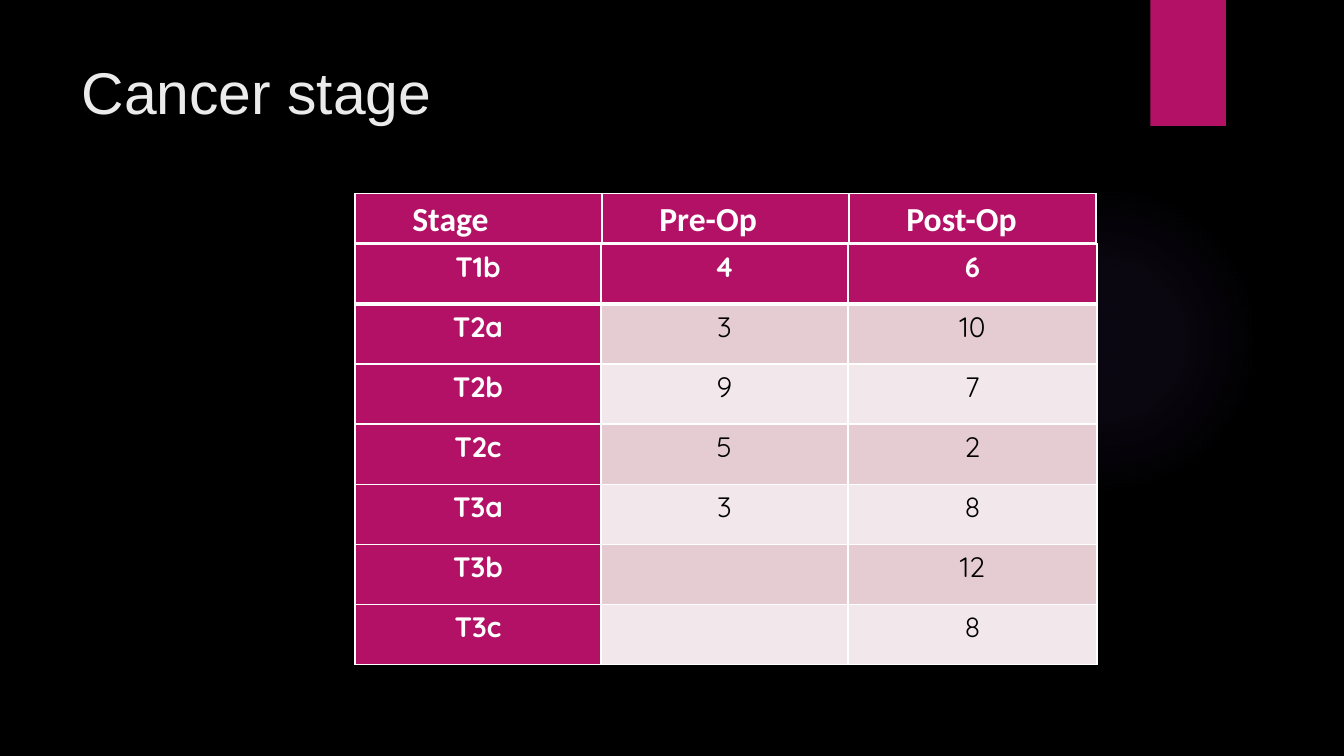
from lxml import etree
from pptx import Presentation
from pptx import util as u
from pptx.dml.color import RGBColor
from pptx.enum import shapes, text
from pptx.oxml import parse_xml
from pptx.oxml.ns import qn

NS = 'xmlns:a="http://schemas.openxmlformats.org/drawingml/2006/main"'
HUES = {
    "back": "000000", "pink": "B31166", "glow": "9B6BF2", "title": "EBEBEB",
    "white": "FFFFFF", "ink": "000000", "rose": "E5CCD3", "pale": "F2E7EA",
}
HEAD = [["Stage", "Pre-Op", "Post-Op"]]
COUNTS = [
    ["T1b", "4", "6"],
    ["T2a", "3", "10"],
    ["T2b", "9", "7"],
    ["T2c", "5", "2"],
    ["T3a", "3", "8"],
    ["T3b", "", "12"],
    ["T3c", "", "8"],
]


def rgb(name):
    return RGBColor.from_string(HUES[name])


def write(frame, words, font="Arial", size=20, hue="ink", bold=False,
          align=text.PP_ALIGN.LEFT, space=None, indent=0):
    par = frame.paragraphs[0]
    par.alignment = align
    par.line_spacing = space
    if indent:
        par._p.get_or_add_pPr().set("marL", str(u.Inches(indent)))
    run = par.add_run()
    run.text = words
    run.font.name = font
    run.font.size = u.Pt(size)
    run.font.bold = bold
    run.font.color.rgb = rgb(hue)


class Deck:
    """Holds the style and the current slide, and draws each kind of element."""

    def __init__(self):
        self.show = Presentation()
        self.show.slide_width = u.Inches(13.33)
        self.show.slide_height = u.Inches(7.5)
        self.slide = self.show.slides.add_slide(self.show.slide_layouts[5])
        fill = self.slide.background.fill
        fill.solid()
        fill.fore_color.rgb = rgb("back")

    def shape(self, kind, *place):
        item = self.slide.shapes.add_shape(kind, *map(u.Inches, place))
        item.shadow.inherit = False
        item.line.fill.background()
        return item

    def glow(self, *place):
        item = self.shape(shapes.MSO_SHAPE.OVAL, *place)
        stops = "".join(
            f'<a:gs pos="{pos}000"><a:srgbClr val="{HUES["glow"]}">'
            f'<a:alpha val="{alpha}000"/></a:srgbClr></a:gs>'
            for pos, alpha in [(0, 7), (36, 6), (69, 0)])
        item._element.spPr.insert(2, parse_xml(
            f'<a:gradFill {NS}><a:gsLst>{stops}</a:gsLst><a:path path="circle">'
            '<a:fillToRect l="50000" t="50000" r="50000" b="50000"/>'
            '</a:path></a:gradFill>'))

    def tab(self, *place):
        item = self.shape(shapes.MSO_SHAPE.RECTANGLE, *place)
        item.fill.solid()
        item.fill.fore_color.rgb = rgb("pink")
        item._element.spPr.find(qn("a:effectLst")).append(parse_xml(
            f'<a:outerShdw {NS} blurRad="{u.Pt(3)}" dist="{u.Pt(2)}" dir="5400000">'
            '<a:srgbClr val="000000"><a:alpha val="45000"/></a:srgbClr>'
            '</a:outerShdw>'))

    def title(self, words, *place):
        item = self.slide.shapes.title
        item.left, item.top, item.width, item.height = map(u.Inches, place)
        item.text_frame.vertical_anchor = text.MSO_ANCHOR.TOP
        write(item.text_frame, words, size=42, hue="title")

    def edge(self, cell, widths):
        props = cell._tc.get_or_add_tcPr()
        for spot, (side, width) in enumerate(widths.items()):
            line = etree.Element(qn(f"a:ln{side}"), w=str(u.Pt(width)))
            fill = etree.SubElement(line, qn("a:solidFill"))
            etree.SubElement(fill, qn("a:srgbClr"), val=HUES["white"])
            props.insert(spot, line)

    def table(self, rows, left, top, widths, high, **style):
        frame = self.slide.shapes.add_table(
            len(rows), len(widths), u.Inches(left), u.Inches(top),
            u.Inches(sum(widths)), u.Inches(high))
        grid = frame.table
        for col, width in zip(grid.columns, widths):
            col.width = u.Inches(width)
        for r, row in enumerate(rows):
            grid.rows[r].height = u.Inches(high / len(rows))
            for c, words in enumerate(row):
                cell = grid.cell(r, c)
                strong = r == 0 or c == 0
                band = "pink" if strong else "rose" if r % 2 else "pale"
                cell.fill.solid()
                cell.fill.fore_color.rgb = rgb(band)
                cell.margin_left = cell.margin_right = u.Inches(0.07)
                cell.margin_top = cell.margin_bottom = 0
                self.edge(cell, {"L": 1, "R": 1, "T": 3 if r == 1 else 1,
                                 "B": 3 if r == 0 else 1})
                if words:
                    write(cell.text_frame, words, bold=strong, space=1.15,
                          hue="white" if strong else "ink", **style)


def main():
    deck = Deck()
    deck.glow(9.41, 1.83, 3.08, 3.08)
    deck.tab(11.41, 0, 0.75, 1.25)
    deck.title("Cancer stage", 0.71, 0.5, 10.29, 1.53)
    deck.table(HEAD, 3.52, 1.92, [2.45, 2.45, 2.45], 0.5, font="Calibri",
               size=24, align=text.PP_ALIGN.JUSTIFY, indent=0.5)
    deck.table(COUNTS, 3.52, 2.42, [2.44, 2.45, 2.47], 4.17, font="Quicksand",
               align=text.PP_ALIGN.CENTER)
    deck.show.save("out.pptx")


if __name__ == "__main__":
    main()
